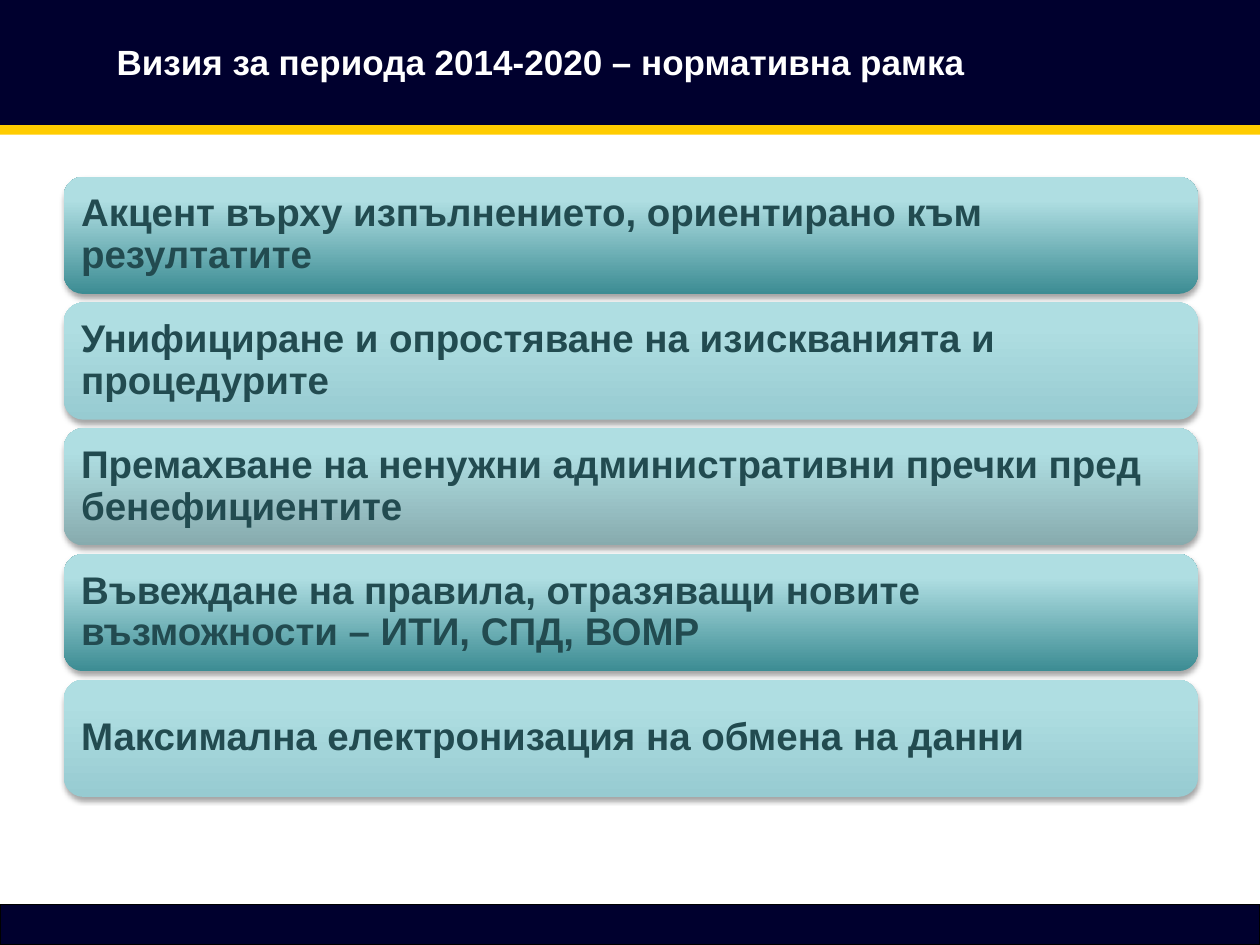
from typing import NamedTuple

from lxml.etree import SubElement
from pptx import Presentation
from pptx.dml.color import RGBColor
from pptx.enum.shapes import MSO_SHAPE
from pptx.enum.text import MSO_ANCHOR, PP_ALIGN
from pptx.oxml.ns import qn
from pptx.util import Pt

WIDE, HIGH = 720, 540
NAVY, GOLD, WHITE, BLACK, INK = "00002E", "FFCC00", "FFFFFF", "000000", "224B50"
TEAL, SKY, GRAY = "3C8C93", "97CBD1", "87ABAE"
TOP, STEP = 101, 71.85


class Band(NamedTuple):
    top: float
    high: float
    fill: str
    line: str | None = None


class Bar(NamedTuple):
    text: str
    base: str


BANDS = [
    Band(0, 71.5, NAVY),
    Band(71.5, 5.5, GOLD),
    Band(517, 23, NAVY, BLACK),
]
BARS = [
    Bar("Акцент върху изпълнението, ориентирано към резултатите", TEAL),
    Bar("Унифициране и опростяване на изискванията и процедурите", SKY),
    Bar("Премахване на ненужни административни пречки пред бенефициентите", GRAY),
    Bar("Въвеждане на правила, отразяващи новите възможности – ИТИ, СПД, ВОМР", TEAL),
    Bar("Максимална електронизация на обмена на данни", SKY),
]


def color(code: str) -> RGBColor:
    return RGBColor.from_string(code)


def write(shape, text: str, size: float, ink: str, align: PP_ALIGN) -> None:
    frame = shape.text_frame
    frame.word_wrap = True
    frame.vertical_anchor = MSO_ANCHOR.MIDDLE
    para = frame.paragraphs[0]
    para.text = text
    para.alignment = align
    font = para.font
    font.name, font.size, font.bold = "Arial", Pt(size), True
    font.color.rgb = color(ink)


def shade(shape, base: str) -> None:
    """Fill with a gradient that rises from the base colour."""
    shape.fill.gradient()
    shape.fill.gradient_angle = 90
    stops = shape._element.spPr.find(".//" + qn("a:gsLst"))
    for stop in list(stops):
        stops.remove(stop)
    for place, code in ((0, base), (80, "AFDEE2"), (100, "AFE0E4")):
        stop = SubElement(stops, qn("a:gs"), pos=str(place * 1000))
        SubElement(stop, qn("a:srgbClr"), val=code)


def drop(shape) -> None:
    """Cast a soft shadow straight down."""
    shape.shadow.inherit = False
    effects = shape._element.spPr.find(qn("a:effectLst"))
    cast = SubElement(effects, qn("a:outerShdw"), blurRad=str(Pt(3.1)),
                      dist=str(Pt(1.8)), dir="5400000", rotWithShape="0")
    tint = SubElement(cast, qn("a:srgbClr"), val=BLACK)
    SubElement(tint, qn("a:alpha"), val="35000")


def draw_band(slide, band: Band) -> None:
    shape = slide.shapes.add_shape(
        MSO_SHAPE.RECTANGLE, 0, Pt(band.top), Pt(WIDE), Pt(band.high))
    shape.shadow.inherit = False
    shape.fill.solid()
    shape.fill.fore_color.rgb = color(band.fill)
    if band.line:
        shape.line.color.rgb = color(band.line)
        shape.line.width = Pt(0.75)
    else:
        shape.line.fill.background()


def draw_bar(slide, bar: Bar, top: float) -> None:
    shape = slide.shapes.add_shape(
        MSO_SHAPE.ROUNDED_RECTANGLE, Pt(36.5), Pt(top), Pt(648), Pt(67))
    shade(shape, bar.base)
    shape.line.fill.background()
    drop(shape)
    write(shape, bar.text, 22, INK, PP_ALIGN.LEFT)
    frame = shape.text_frame
    frame.margin_left = frame.margin_right = Pt(6.6)
    frame.margin_top = frame.margin_bottom = Pt(6.6)
    frame.paragraphs[0].line_spacing = 0.9


def main() -> None:
    deck = Presentation()
    deck.slide_width, deck.slide_height = Pt(WIDE), Pt(HIGH)
    slide = deck.slides.add_slide(deck.slide_layouts[6])

    # Header and footer bands
    for band in BANDS:
        draw_band(slide, band)

    # Title
    title = slide.shapes.add_textbox(Pt(8.5), Pt(4.5), Pt(601), Pt(61))
    write(title, "Визия за периода 2014-2020 – нормативна рамка",
          20, WHITE, PP_ALIGN.CENTER)

    # Stack of bars
    for row, bar in enumerate(BARS):
        draw_bar(slide, bar, TOP + row * STEP)

    deck.save("out.pptx")


if __name__ == "__main__":
    main()
